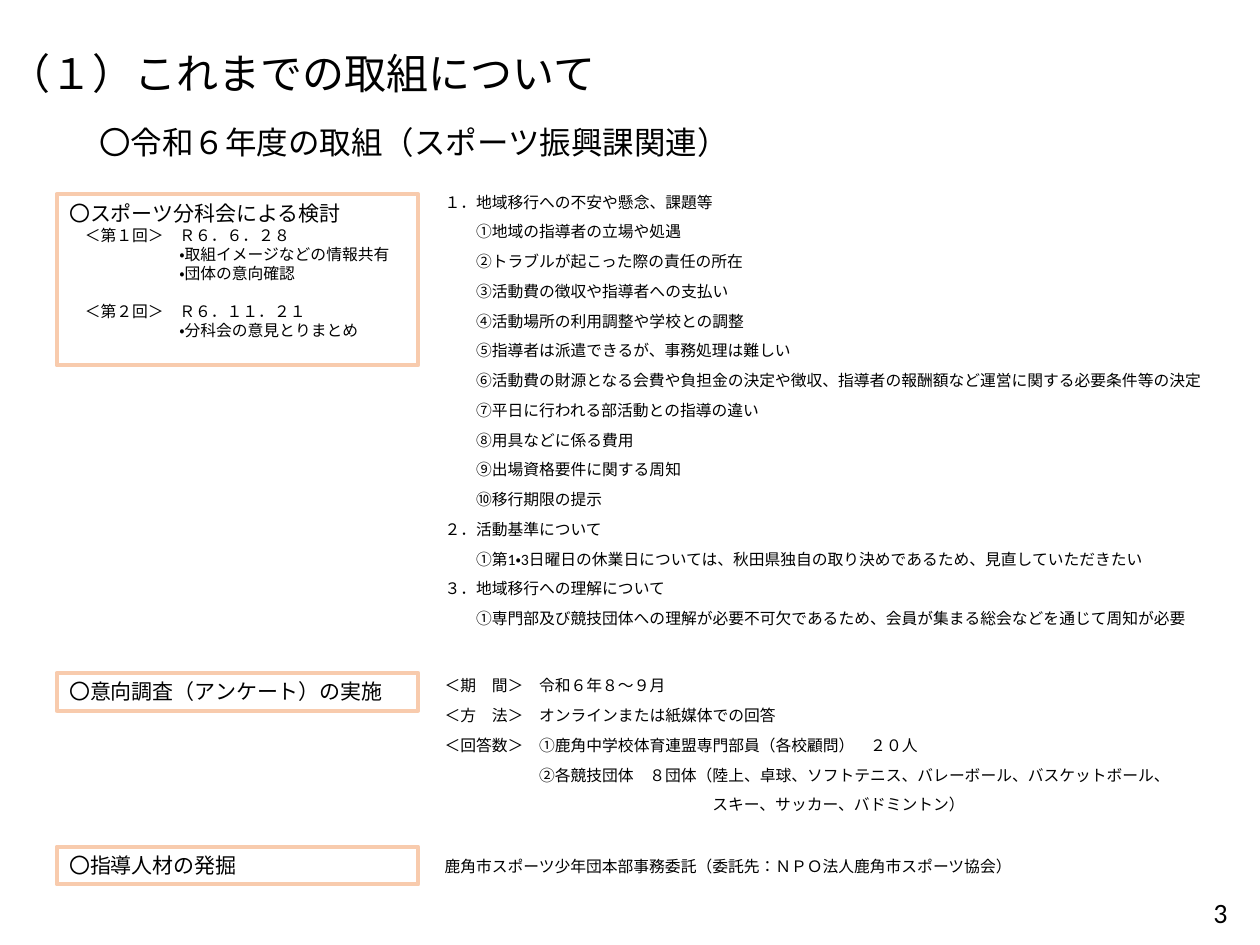
from dataclasses import dataclass
from pptx import Presentation
from pptx.dml.color import RGBColor
from pptx.enum.lang import MSO_LANGUAGE_ID
from pptx.enum.shapes import MSO_SHAPE
from pptx.enum.text import MSO_ANCHOR, PP_ALIGN
from pptx.util import Inches, Pt


@dataclass(frozen=True)
class Theme:
    text: RGBColor = RGBColor(0, 0, 0)
    border: RGBColor = RGBColor(0xF8, 0xCB, 0xAD)
    font: str = "Calibri"
    detail_font: str = "Arial"
    title: int = 24
    subtitle: int = 18
    number: int = 16
    heading: int = 12
    body: int = 9


T = Theme()
W, H = 10, 7.5
LEFT, LEFT_W = 0.45, 2.87
RIGHT, RIGHT_W = 3.43, 6.45

MEETINGS = [
    (1, "＜第１回＞　Ｒ６．６．２８", 0),
    (7, "・取組イメージなどの情報共有", 0),
    (7, "・団体の意向確認", 0),
    (1, "＜第２回＞　Ｒ６．１１．２１", 11),
    (7, "・分科会の意見とりまとめ", 0),
]
OPINIONS = [
    (0, "１．地域移行への不安や懸念、課題等"),
    (2, "①地域の指導者の立場や処遇"),
    (2, "②トラブルが起こった際の責任の所在"),
    (2, "③活動費の徴収や指導者への支払い"),
    (2, "④活動場所の利用調整や学校との調整"),
    (2, "⑤指導者は派遣できるが、事務処理は難しい"),
    (2, "⑥活動費の財源となる会費や負担金の決定や徴収、指導者の報酬額など運営に関する必要条件等の決定"),
    (2, "⑦平日に行われる部活動との指導の違い"),
    (2, "⑧用具などに係る費用"),
    (2, "⑨出場資格要件に関する周知"),
    (2, "⑩移行期限の提示"),
    (0, "２．活動基準について"),
    (2, "①第1・3日曜日の休業日については、秋田県独自の取り決めであるため、見直していただきたい"),
    (0, "３．地域移行への理解について"),
    (2, "①専門部及び競技団体への理解が必要不可欠であるため、会員が集まる総会などを通じて周知が必要"),
]
SURVEY = [
    (0, "＜期　間＞　令和６年８～９月"),
    (0, "＜方　法＞　オンラインまたは紙媒体での回答"),
    (0, "＜回答数＞　①鹿角中学校体育連盟専門部員（各校顧問）　２０人"),
    (6, "②各競技団体　８団体（陸上、卓球、ソフトテニス、バレーボール、バスケットボール、"),
    (17, "スキー、サッカー、バドミントン）"),
]
STAFFING = [(0, "鹿角市スポーツ少年団本部事務委託（委託先：ＮＰＯ法人鹿角市スポーツ協会）")]
SECTIONS = [
    (1.54, 1.36, "〇スポーツ分科会による検討", MEETINGS, 1.53, 3.59, OPINIONS),
    (5.34, 0.3, "〇意向調査（アンケート）の実施", [], 5.37, 1.23, SURVEY),
    (6.72, 0.3, "〇指導人材の発掘", [], 6.8, 0.22, STAFFING),
]


def write(tf, i, text, size, font=T.font, chars=0, before=0, spacing=None):
    p = tf.paragraphs[0] if i == 0 else tf.add_paragraph()
    p.alignment = PP_ALIGN.LEFT
    p.space_before = Pt(before)
    if spacing:
        p.line_spacing = spacing
    if chars:
        pPr = p._p.get_or_add_pPr()
        pPr.set("marL", str(Pt(chars * size)))
        pPr.set("indent", "0")
    r = p.add_run()
    r.text = text
    r.font.size, r.font.name = Pt(size), font
    r.font.color.rgb = T.text
    r.font.language_id = MSO_LANGUAGE_ID.JAPANESE
    return p


def text_frame(s, box):
    tf = s.shapes.add_textbox(*map(Inches, box)).text_frame
    tf.word_wrap = True
    return tf


def add_header(s, box):
    x, y, w, h = box
    tf = text_frame(s, (x, y, w, 0.64))
    tf.vertical_anchor = MSO_ANCHOR.MIDDLE
    tf.margin_left = tf.margin_right = Inches(0.07)
    tf.margin_top = tf.margin_bottom = Inches(0.04)
    write(tf, 0, "（１）これまでの取組について", T.title, spacing=0.9)
    tf = text_frame(s, (x + 0.69, y + 0.68, w - 0.52, h - 0.68))
    write(tf, 0, "〇令和６年度の取組（スポーツ振興課関連）", T.subtitle, before=10, spacing=0.9)


def add_topic(s, box, heading, details):
    sp = s.shapes.add_shape(MSO_SHAPE.RECTANGLE, *map(Inches, box))
    sp.shadow.inherit = False
    sp.fill.background()
    sp.line.color.rgb, sp.line.width = T.border, Pt(2.25)
    tf = sp.text_frame
    tf.word_wrap = True
    tf.vertical_anchor = MSO_ANCHOR.TOP
    write(tf, 0, heading, T.heading)
    for i, (chars, text, before) in enumerate(details, 1):
        write(tf, i, text, T.body, T.detail_font, chars, before)


def add_notes_column(s, box, lines):
    tf = text_frame(s, box)
    for i, (chars, text) in enumerate(lines):
        write(tf, i, text, T.body, chars=chars, before=10, spacing=Pt(7))


def add_number(s, box):
    p = write(text_frame(s, box), 0, "3", T.number, before=10, spacing=0.9)
    p.alignment = PP_ALIGN.RIGHT


def main():
    prs = Presentation()
    prs.slide_width, prs.slide_height = Inches(W), Inches(H)
    s = prs.slides.add_slide(prs.slide_layouts[6])
    add_header(s, (0, 0.28, 5.83, 1.12))
    for top, height, heading, details, y, h, lines in SECTIONS:
        add_topic(s, (LEFT, top, LEFT_W, height), heading, details)
        add_notes_column(s, (RIGHT, y, RIGHT_W, h), lines)
    add_number(s, (W - 0.55, H - 0.41, 0.39, 0.39))
    prs.save("out.pptx")


if __name__ == "__main__":
    main()
